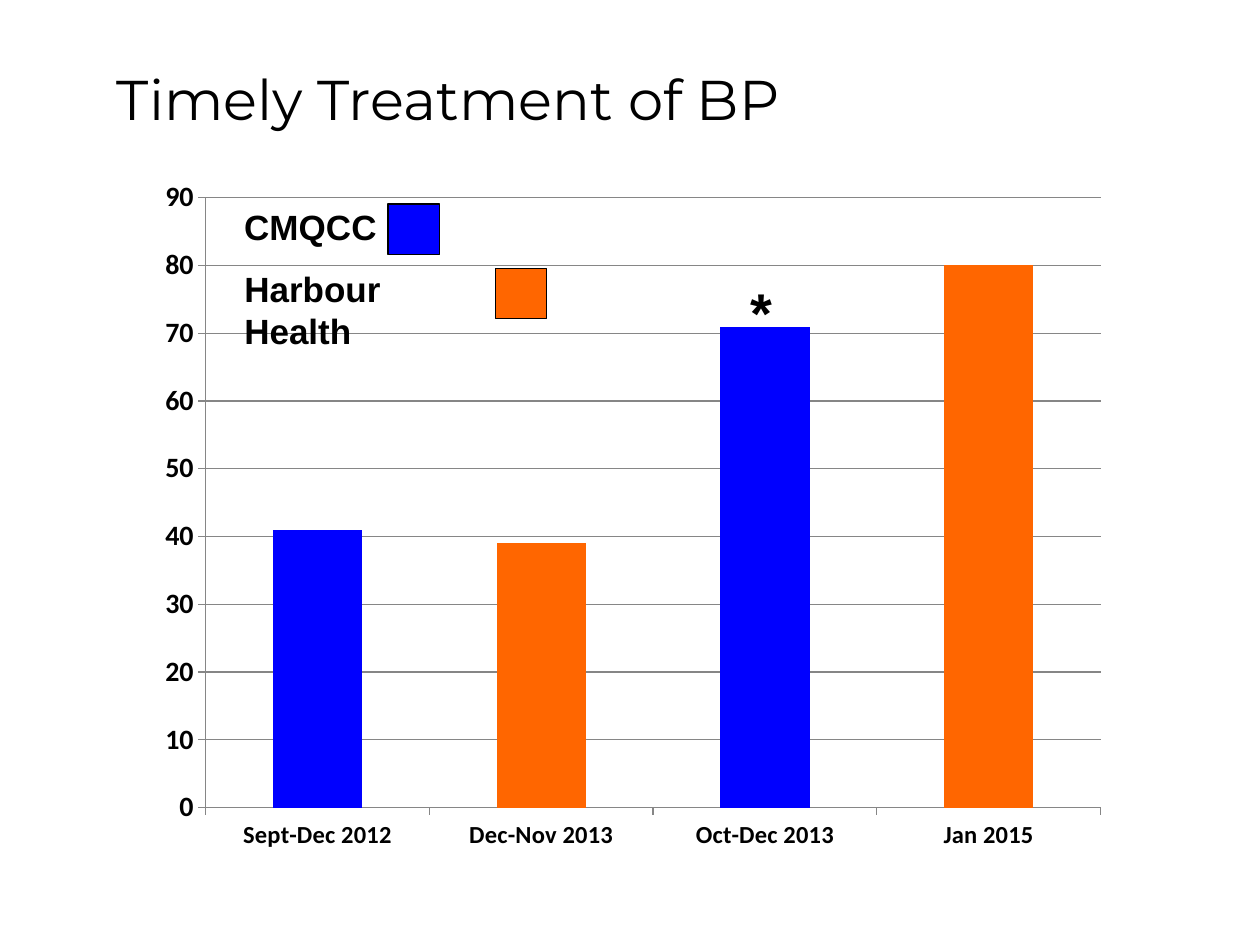
from lxml.etree import SubElement
from pptx import Presentation
from pptx.chart.data import CategoryChartData
from pptx.dml.color import RGBColor
from pptx.enum.chart import XL_CHART_TYPE, XL_TICK_MARK
from pptx.enum.shapes import MSO_SHAPE
from pptx.enum.text import MSO_ANCHOR
from pptx.oxml.ns import qn
from pptx.util import Inches, Pt

BLACK = RGBColor(0x00, 0x00, 0x00)
GRAY = RGBColor(0x86, 0x86, 0x86)
BLUE = RGBColor(0x00, 0x00, 0xFF)
ORANGE = RGBColor(0xFF, 0x66, 0x00)

# Content
TITLE = "Timely Treatment of BP"
BARS = [
    ("Sept-Dec 2012", 41, BLUE),
    ("Dec-Nov 2013", 39, ORANGE),
    ("Oct-Dec 2013", 71, BLUE),
    ("Jan 2015", 80, ORANGE),
]
# Label, label top, label width, swatch left, swatch top, colour
LEGEND = [
    ("CMQCC", 1.58, 1.26, 3.08, 1.62, BLUE),
    ("Harbour Health", 2.07, 2.09, 3.93, 2.13, ORANGE),
]
LEGEND_LEFT = 1.84
# Plot area as fractions of the chart frame
PLOT_LAYOUT = {"x": 0.06, "y": 0.04, "w": 0.92, "h": 0.88}


def add_text(slide, text, box, size, font_name="Arial", bold=True, wrap=False):
    text_box = slide.shapes.add_textbox(*map(Inches, box))
    frame = text_box.text_frame
    frame.word_wrap = wrap
    run = frame.paragraphs[0].add_run()
    run.text = text
    run.font.name = font_name
    run.font.size = Pt(size)
    run.font.bold = bold
    run.font.color.rgb = BLACK
    return frame


def style_axis(axis, size):
    axis.major_tick_mark = XL_TICK_MARK.OUTSIDE
    axis.minor_tick_mark = XL_TICK_MARK.NONE
    axis.format.line.color.rgb = GRAY
    axis.format.line.width = Pt(0.75)
    font = axis.tick_labels.font
    font.name = "Calibri"
    font.size = Pt(size)
    font.bold = True
    font.color.rgb = BLACK


def place_plot(chart):
    plot_area = chart.plots[0]._element.getparent()
    layout = plot_area.find(qn("c:layout"))
    if layout is None:
        layout = SubElement(plot_area, qn("c:layout"))
        plot_area.insert(0, layout)
    manual = SubElement(layout, qn("c:manualLayout"))
    settings = {"layoutTarget": "inner", "xMode": "edge", "yMode": "edge", **PLOT_LAYOUT}
    for name, value in settings.items():
        SubElement(manual, qn(f"c:{name}")).set("val", str(value))


def add_bar_chart(slide):
    data = CategoryChartData()
    data.categories = [label for label, _, _ in BARS]
    data.add_series("Series 1", [value for _, value, _ in BARS])
    box = map(Inches, (1.17, 1.35, 7.72, 5.5))
    chart = slide.shapes.add_chart(XL_CHART_TYPE.COLUMN_CLUSTERED, *box, data).chart
    chart.has_legend = False
    chart.has_title = False
    chart.font.name = "Calibri"
    chart.font.size = Pt(10)
    chart.font.color.rgb = BLACK

    plot = chart.plots[0]
    plot.vary_by_categories = False
    plot.gap_width = 150
    for index, (_, _, color) in enumerate(BARS):
        fill = plot.series[0].points[index].format.fill
        fill.solid()
        fill.fore_color.rgb = color

    style_axis(chart.category_axis, 14)
    value_axis = chart.value_axis
    style_axis(value_axis, 16)
    value_axis.minimum_scale = 0
    value_axis.maximum_scale = 90
    value_axis.major_unit = 10
    value_axis.has_major_gridlines = True
    gridline = value_axis.major_gridlines.format.line
    gridline.color.rgb = GRAY
    gridline.width = Pt(0.75)
    place_plot(chart)


def add_swatch(slide, left, top, color):
    swatch = slide.shapes.add_shape(
        MSO_SHAPE.RECTANGLE, Inches(left), Inches(top), Inches(0.41), Inches(0.4))
    swatch.shadow.inherit = False
    swatch.fill.solid()
    swatch.fill.fore_color.rgb = color
    swatch.line.color.rgb = BLACK
    swatch.line.width = Pt(0.75)


def main():
    presentation = Presentation()
    presentation.slide_width = Inches(10)
    presentation.slide_height = Inches(7.5)
    slide = presentation.slides.add_slide(presentation.slide_layouts[6])

    # Title
    title = add_text(slide, TITLE, (0.83, 0.28, 8.5, 1), 32, "Montserrat", False, True)
    title.vertical_anchor = MSO_ANCHOR.MIDDLE

    # Chart
    add_bar_chart(slide)

    # Legend
    for label, top, width, swatch_left, swatch_top, color in LEGEND:
        add_text(slide, label, (LEGEND_LEFT, top, width, 0.44), 20)
        add_swatch(slide, swatch_left, swatch_top, color)

    # Significance mark
    add_text(slide, "*", (5.86, 2.15, 0.38, 0.64), 32)

    presentation.save("out.pptx")


if __name__ == "__main__":
    main()
